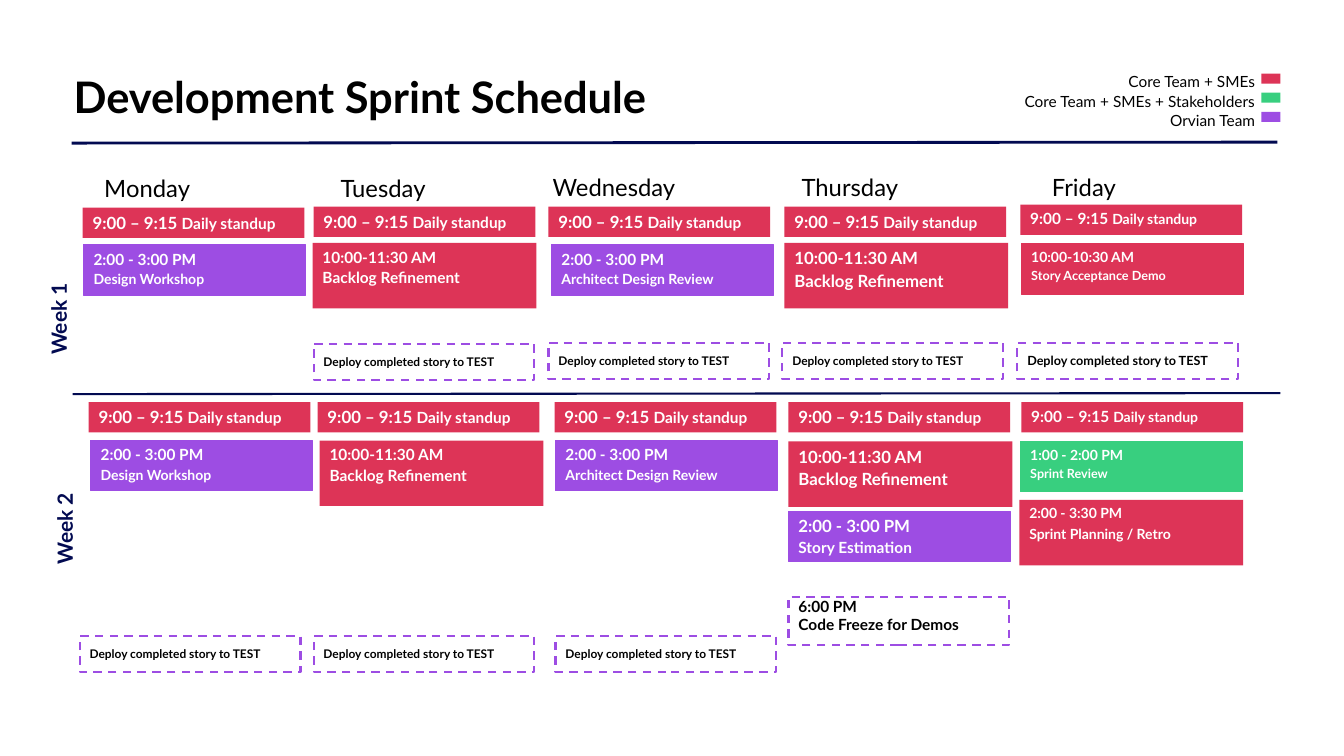
"""Builds the two-week development sprint schedule slide."""
from pptx import Presentation
from pptx.dml.color import RGBColor
from pptx.enum.dml import MSO_LINE
from pptx.enum.shapes import MSO_CONNECTOR, MSO_SHAPE
from pptx.enum.text import MSO_ANCHOR, MSO_AUTO_SIZE, PP_ALIGN
from pptx.oxml.ns import qn
from pptx.util import Inches, Pt

RECTANGLE = MSO_SHAPE.RECTANGLE
STRAIGHT = MSO_CONNECTOR.STRAIGHT
DASH = MSO_LINE.DASH
TOP, MIDDLE = MSO_ANCHOR.TOP, MSO_ANCHOR.MIDDLE
NO_FIT = MSO_AUTO_SIZE.NONE
LEFT, CENTER, RIGHT = PP_ALIGN.LEFT, PP_ALIGN.CENTER, PP_ALIGN.RIGHT

RED, GREEN, PURPLE = "DD3457", "38CF7F", "9D4DE3"
NAVY, BLACK, WHITE = "020A51", "000000", "FFFFFF"

LEGEND = [("Core Team + SMEs", RED),
          ("Core Team + SMEs + Stakeholders", GREEN),
          ("Orvian Team", PURPLE)]
DAYS = [("Monday", 0.36, 1.67), ("Tuesday", 2.7, 1.67), ("Wednesday", 4.99, 1.66),
        ("Thursday", 7.33, 1.66), ("Friday", 9.65, 1.66)]
WEEKS = [("Week 1", -0.52, 2.99), ("Week 2", -0.46, 5.07)]
STANDUPS = [(0.82, 2.06, 12), (3.11, 2.05, 12), (5.44, 2.05, 12),
            (7.78, 2.05, 12), (10.12, 2.03, 11),
            (0.88, 3.99, 12), (3.15, 3.99, 12), (5.5, 3.99, 12),
            (7.82, 3.99, 12), (10.13, 3.99, 11)]
REFINEMENTS = [(3.1, 2.41, 11), (7.78, 2.41, 12), (3.17, 4.37, 11), (7.82, 4.38, 12)]
MEETINGS = [(0.83, 2.43, PURPLE, "2:00 - 3:00 PM", "Design Workshop", 11),
            (5.47, 2.43, PURPLE, "2:00 - 3:00 PM", "Architect Design Review", 11),
            (10.13, 2.42, RED, "10:00-10:30 AM", "Story Acceptance Demo", 10),
            (0.9, 4.37, PURPLE, "2:00 - 3:00 PM", "Design Workshop", 11),
            (5.51, 4.37, PURPLE, "2:00 - 3:00 PM", "Architect Design Review", 11),
            (7.82, 5.07, PURPLE, "2:00 - 3:00 PM", "Story Estimation", 12),
            (10.12, 4.38, GREEN, "1:00 - 2:00 PM", "Sprint Review", 10)]
DEPLOYMENTS = [(3.11, 3.41, 8.5), (5.44, 3.4, 8.5), (7.76, 3.4, 8.5), (10.09, 3.4, 9),
               (0.79, 6.31, 8.5), (3.11, 6.31, 8.5), (5.51, 6.31, 8.5)]


def rgb(value):
    """Turn a hex string into a colour."""
    return RGBColor.from_string(value)


class Schedule:
    """Holds the slide and the style of the schedule."""

    font = "Lato"

    def __init__(self, page):
        """Keep the page that receives the elements."""
        self.page = page

    def place(self, shape, at):
        """Move and size a shape."""
        for name, value in zip(("left", "top", "width", "height"), at):
            setattr(shape, name, Inches(value))

    def fill_text(self, shape, paragraphs, color, bold=False, align=LEFT,
                  anchor=TOP, inset=(0.1, 0.05), gap=0):
        """Fill a shape with paragraphs, each a list of (text, size) spans."""
        frame = shape.text_frame
        across, down = map(Inches, inset)
        settings = {"word_wrap": True, "auto_size": NO_FIT, "vertical_anchor": anchor,
                    "margin_left": across, "margin_right": across,
                    "margin_top": down, "margin_bottom": down}
        for name, value in settings.items():
            setattr(frame, name, value)
        for index, spans in enumerate(paragraphs):
            para = frame.add_paragraph() if index else frame.paragraphs[0]
            para.alignment = align
            para.space_before = Pt(gap if index else 0)
            for text, size in spans:
                span = para.add_run()
                span.text = text
                span.font.color.rgb = rgb(color)
                for name, value in {"name": self.font, "size": Pt(size),
                                    "bold": bold}.items():
                    setattr(span.font, name, value)

    def title(self, at, text, size):
        """Place and format the title placeholder."""
        title = self.page.shapes.title
        self.place(title, at)
        self.fill_text(title, [[(text, size)]], BLACK, bold=True, anchor=MIDDLE,
                       inset=(0.13, 0.07))

    def label(self, at, text, size, color=BLACK, rotation=0, **style):
        """Add a one-line text box."""
        box = self.page.shapes.add_textbox(*map(Inches, at))
        box.rotation = rotation
        self.fill_text(box, [[(text, size)]], color, **style)

    def rule(self, start, end, width):
        """Add a straight navy divider."""
        line = self.page.shapes.add_connector(STRAIGHT, *map(Inches, start + end))
        line.line.color.rgb = rgb(NAVY)
        line.line.width = Pt(width)
        properties = line._element.spPr
        properties.append(properties.makeelement(qn("a:effectLst"), {}))

    def block(self, at, color, paragraphs=(), outlined=False, gap=1.6):
        """Add a filled rectangle with white bold text."""
        box = self.page.shapes.add_shape(RECTANGLE, *map(Inches, at))
        box.shadow.inherit = False
        box.fill.solid()
        box.fill.fore_color.rgb = rgb(color)
        if outlined:
            box.line.color.rgb = rgb(color)
            box.line.width = Pt(0.75)
        else:
            box.line.fill.background()
        self.fill_text(box, paragraphs, WHITE, bold=True, gap=gap)

    def milestone(self, at, paragraphs, anchor=MIDDLE, inset=(0.1, 0.1)):
        """Add a dashed purple frame with black bold text."""
        box = self.page.shapes.add_shape(RECTANGLE, *map(Inches, at))
        box.shadow.inherit = False
        box.fill.background()
        box.line.color.rgb = rgb(PURPLE)
        box.line.width = Pt(1.5)
        box.line.dash_style = DASH
        self.fill_text(box, paragraphs, BLACK, bold=True, anchor=anchor, inset=inset)


def main():
    """Build the deck and save it."""
    deck = Presentation()
    deck.slide_width, deck.slide_height = Inches(13.33), Inches(7.5)
    schedule = Schedule(deck.slides.add_slide(deck.slide_layouts[5]))

    schedule.title((0.6, 0.6, 8.94, 0.7), "Development Sprint Schedule", 31)
    schedule.rule((0.71, 1.42), (12.67, 1.41), 2)
    schedule.rule((0.72, 3.91), (12.7, 3.9), 1.5)
    for row, (team, color) in enumerate(LEGEND):
        shift = row * 0.19
        schedule.label((9.7, 0.67 + shift, 2.8, 0.21), team, 11, align=RIGHT,
                       inset=(0.05, 0.05))
        schedule.block((12.51, 0.73 + shift, 0.19, 0.1), color)

    for day, left, top in DAYS:
        schedule.label((left, top, 2.2, 0.36), day, 17, align=CENTER)
    for week, left, top in WEEKS:
        schedule.label((left, top, 2.2, 0.35), week, 15, NAVY, 270,
                       bold=True, align=CENTER)

    for left, top, size in STANDUPS:
        schedule.block((left, top, 2.2, 0.3), RED,
                       [[("9:00 – 9:15 ", size), ("Daily standup", size - 1)]])
    for left, top, size in REFINEMENTS:
        schedule.block((left, top, 2.22, 0.65), RED,
                       [[("10:00-11:30 AM", size)], [("Backlog Refinement", size)]])
    for left, top, color, time, name, size in MEETINGS:
        schedule.block((left, top, 2.2, 0.5), color,
                       [[(time, size)], [(name, size - 1)]], outlined=True)
    schedule.block((10.11, 4.96, 2.22, 0.65), RED,
                   [[("2:00 - 3:30 PM", 10)], [("Sprint Planning / Retro", 10)]], gap=2.4)

    for left, top, size in DEPLOYMENTS:
        schedule.milestone((left, top, 2.19, 0.36),
                           [[("Deploy completed story to TEST", size)]])
    schedule.milestone((7.82, 5.92, 2.19, 0.48),
                       [[("6:00 PM", 11)], [("Code Freeze for Demos", 11)]],
                       anchor=TOP, inset=(0.1, 0))

    deck.save("out.pptx")


if __name__ == "__main__":
    main()
